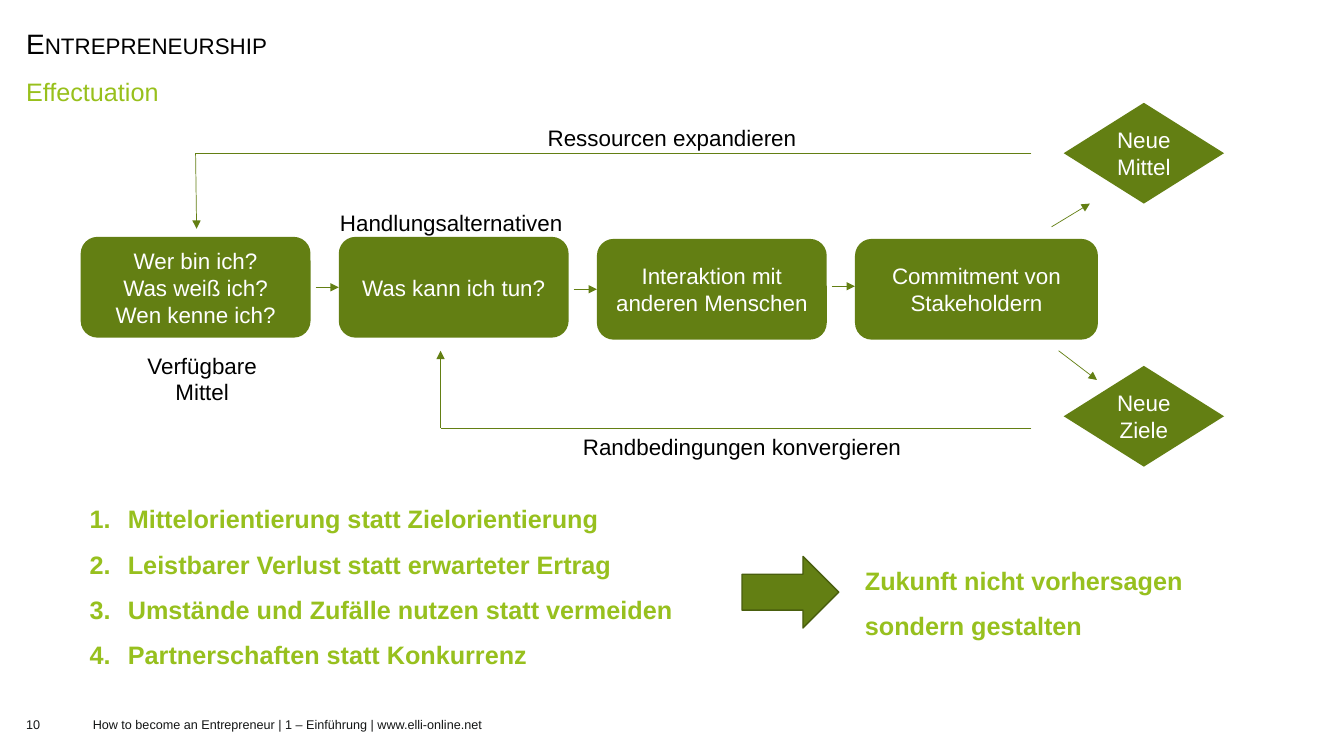
"""Build the Effectuation slide: a process diagram, four principles and a conclusion."""
import pptx
import pptx.util
import pptx.dml.color
import pptx.enum.shapes
import pptx.enum.text
import pptx.oxml.ns
from lxml import etree

HUES = {"olive": "637F13", "edge": "495E0E", "lime": "98C01C", "leaf": "97C01E",
        "black": "000000", "white": "FFFFFF", "ink": "141616"}
WIDE, HIGH = 13.33, 7.5
LEFT, PITCH, BOX, TALL = 0.8, 2.56, 2.28, 1.0

TITLE = "Entrepreneurship"
TOPIC = "Effectuation"
FOOT = [("10", 0.26, 0.5),
        ("How to become an Entrepreneur | 1 – Einführung | www.elli-online.net", 0.92, 5.35)]
STEPS = [(["Wer bin ich?", "Was weiß ich?", "Wen kenne ich?"], 2.35, BOX),
         (["Was kann ich tun?"], 2.35, BOX),
         (["Interaktion mit anderen Menschen"], 2.37, BOX),
         (["Commitment von Stakeholdern"], 2.37, 2.41)]
LINKS = [2.85, 2.87, 2.84]
GOALS = [("Neue Mittel", 1.02), ("Neue Ziele", 3.63)]
LABELS = [("Verfügbare Mittel", 1.32, 3.44, 1.37, 0.64),
          ("Ressourcen expandieren", 5.25, 1.18, 2.83, 0.37),
          ("Randbedingungen konvergieren", 5.43, 4.25, 3.86, 0.37),
          ("Handlungsalternativen", 3.18, 2.03, 2.59, 0.37)]
PATHS = [((10.5, 3.48), (10.88, 3.77), True), ((10.43, 2.25), (10.81, 2.02), True),
         ((4.37, 4.25), (4.37, 3.48), True), ((10.23, 4.25), (4.37, 4.25), False),
         ((1.94, 1.52), (1.95, 2.27), True), ((10.23, 1.52), (1.94, 1.52), False)]
RULES = ["Mittelorientierung statt Zielorientierung",
         "Leistbarer Verlust statt erwarteter Ertrag",
         "Umstände und Zufälle nutzen statt vermeiden",
         "Partnerschaften statt Konkurrenz"]
CLOSE = ["Zukunft nicht vorhersagen", "sondern gestalten"]

KIND = pptx.enum.shapes.MSO_SHAPE
SIDE = pptx.enum.text.PP_ALIGN
ROW = pptx.enum.text.MSO_ANCHOR
inch = pptx.util.Inches


def tint(name):
    return pptx.dml.color.RGBColor.from_string(HUES[name])


def child(node, tag, **attrs):
    return etree.SubElement(node, pptx.oxml.ns.qn(tag), attrs)


def write(shape, lines, size, hue, side=SIDE.LEFT, row=ROW.TOP, gap=None,
          bold=False, count=False, pad=None):
    frame = shape.text_frame
    frame.word_wrap = True
    frame.vertical_anchor = row
    if pad is not None:
        frame.margin_left = frame.margin_right = pad
        frame.margin_top = frame.margin_bottom = pad
    frame.text = "\n".join(lines)
    for para in frame.paragraphs:
        para.alignment = side
        if gap:
            para.line_spacing = gap
        if count:
            props = para._p.get_or_add_pPr()
            props.set("marL", str(inch(0.38)))
            props.set("indent", str(-inch(0.38)))
            child(props, "a:buFont", typeface="+mj-lt")
            child(props, "a:buAutoNum", type="arabicPeriod")
        font = para.font
        font.name, font.size, font.bold = "Arial", pptx.util.Pt(size), bold
        font.color.rgb = tint(hue)


def label(slide, lines, x, y, w, h, size, hue, **style):
    box = slide.shapes.add_textbox(inch(x), inch(y), inch(w), inch(h))
    write(box, lines, size, hue, **style)


def solid(slide, kind, x, y, w, h, lines=(), edge=None):
    shape = slide.shapes.add_shape(kind, inch(x), inch(y), inch(w), inch(h))
    shape.shadow.inherit = False
    shape.fill.solid()
    shape.fill.fore_color.rgb = tint("olive")
    if edge:
        shape.line.color.rgb = tint(edge)
        shape.line.width = pptx.util.Pt(1)
    else:
        shape.line.fill.background()
    if lines:
        write(shape, lines, 16, "white", side=SIDE.CENTER, row=ROW.MIDDLE)


def line(slide, start, end, head=True):
    link = slide.shapes.add_connector(pptx.enum.shapes.MSO_CONNECTOR.STRAIGHT,
                                      *map(inch, start + end))
    link.line.color.rgb = tint("olive")
    link.line.width = pptx.util.Pt(0.5)
    if head:
        child(link.line._get_or_add_ln(), "a:tailEnd", type="triangle")
    child(link._element.spPr, "a:effectLst")


def main():
    deck = pptx.Presentation()
    deck.slide_width, deck.slide_height = inch(WIDE), inch(HIGH)
    slide = deck.slides.add_slide(deck.slide_layouts[5])

    title = slide.shapes.title
    title.left, title.top, title.width, title.height = map(inch, (0.16, 0.22, 9.37, 0.39))
    write(title, [TITLE], 20, "black", row=ROW.MIDDLE, gap=1.1)
    title.text_frame.paragraphs[0].runs[0].font._element.set("cap", "small")
    label(slide, [TOPIC], 0.16, 0.68, 13.02, 0.39, 18, "lime", gap=1.1)
    for text, x, w in FOOT:
        label(slide, [text], x, 7, w, 0.37, 9, "ink", row=ROW.MIDDLE, pad=0)

    for text, y in GOALS:
        solid(slide, KIND.DIAMOND, 10.55, y, 1.59, TALL, [text])
    for i, (lines, y, w) in enumerate(STEPS):
        solid(slide, KIND.ROUNDED_RECTANGLE, LEFT + i * PITCH, y, w, TALL, lines)
    for i, y in enumerate(LINKS, 1):
        x = LEFT + i * PITCH
        line(slide, (x - 0.23, y), (x, y))
    for start, end, head in PATHS:
        line(slide, start, end, head)
    for text, *place in LABELS:
        label(slide, [text], *place, 16, "black", side=SIDE.CENTER)

    label(slide, RULES, 0.79, 4.85, 11.55, 1.79, 18, "leaf",
          row=ROW.MIDDLE, gap=1.5, bold=True, count=True)
    label(slide, CLOSE, 8.48, 5.41, 4.52, 1, 18, "leaf", gap=1.5, bold=True)
    solid(slide, KIND.RIGHT_ARROW, 7.36, 5.52, 0.96, 0.71, edge="edge")
    deck.save("out.pptx")


if __name__ == "__main__":
    main()
